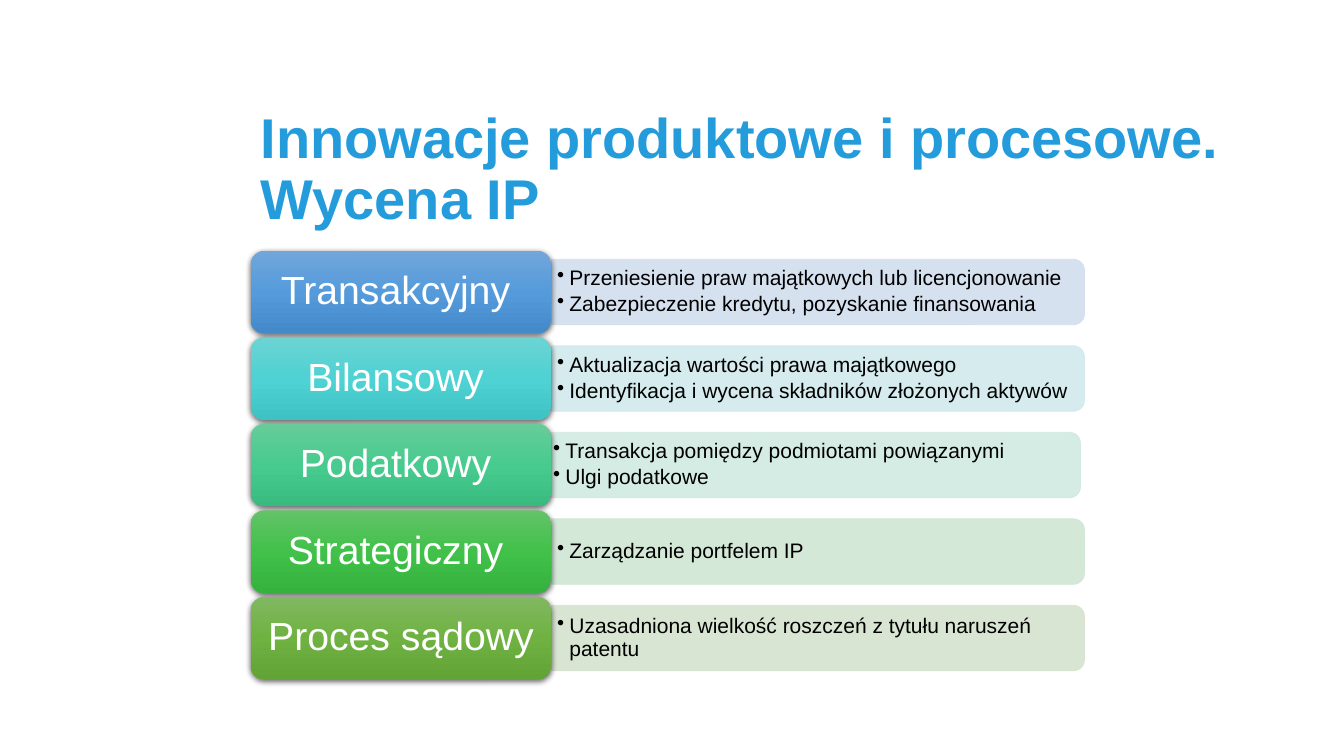
from pptx import Presentation
from pptx import util as u
from pptx.dml.color import RGBColor
from pptx.enum import shapes, text
from pptx.oxml import parse_xml
from pptx.oxml.ns import nsdecls, qn

TITLE = "Innowacje produktowe i procesowe.\vWycena IP"

# label, panel colour, label gradient, left shift of the panel (cm), details
ROWS = [
    ("Transakcyjny ", "D2DEEF", ("71A6DB", "559BDB", "448ACA"), 0,
     ["Przeniesienie praw majątkowych lub licencjonowanie",
      "Zabezpieczenie kredytu, pozyskanie finansowania"]),
    ("Bilansowy ", "D1E9ED", ("6CD3D3", "4ED2D3", "3EC2C3"), 0,
     ["Aktualizacja wartości prawa majątkowego",
      "Identyfikacja i wycena składników złożonych aktywów"]),
    ("Podatkowy ", "D0EAE1", ("67CC9A", "47CB8E", "39BB7F"), 0.1,
     ["Transakcja pomiędzy podmiotami powiązanymi", "Ulgi podatkowe"]),
    ("Strategiczny ", "D0E6D4", ("63C368", "42C14A", "34B23D"), 0,
     ["Zarządzanie portfelem IP"]),
    ("Proces sądowy", "D5E3CF", ("81B861", "6FB242", "62A336"), 0,
     ["Uzasadniona wielkość roszczeń z tytułu naruszeń patentu"]),
]

LEFT, TOP, PITCH = 6.32, 6.32, 2.18
LABEL_W, LABEL_H = 7.57, 2.08
PANEL_W, PANEL_H = 13.44, 1.65
DETAIL_W, DETAIL_H = 13.36, 1.5

TITLE_FONT = {"name": "Arial", "size": u.Pt(40), "bold": True}
LABEL_FONT = {"name": "Arial", "size": u.Pt(28)}
DETAIL_FONT = {"name": "Arial", "size": u.Pt(15)}


def paint(color_format, value):
    color_format.rgb = RGBColor.from_string(value)


def cm_box(left, top, width, height):
    return [u.Cm(value) for value in (left, top, width, height)]


def set_frame(frame, margin_x, margin_y):
    frame.word_wrap = True
    frame.vertical_anchor = text.MSO_ANCHOR.MIDDLE
    frame.margin_left = frame.margin_right = u.Cm(margin_x)
    frame.margin_top = frame.margin_bottom = u.Cm(margin_y)


def write(para, words, font, color, align):
    para.text = words
    para.alignment = align
    para.line_spacing = 0.9
    for span in para.runs:
        for name, value in font.items():
            setattr(span.font, name, value)
        paint(span.font.color, color)


def add_panel(page, left, middle, color):
    """Add a bar rounded on its right end: a turned top-rounded rectangle."""
    center = left + PANEL_W / 2
    panel = page.shapes.add_shape(
        shapes.MSO_SHAPE.ROUND_2_SAME_RECTANGLE,
        *cm_box(center - PANEL_H / 2, middle - PANEL_W / 2, PANEL_H, PANEL_W))
    panel.rotation = 90
    panel.shadow.inherit = False
    panel.fill.solid()
    paint(panel.fill.fore_color, color)
    paint(panel.line.color, color)
    panel.line.width = u.Pt(0.5)
    for tint in panel._element.spPr.iter(qn("a:srgbClr")):
        tint.append(parse_xml(f'<a:alpha {nsdecls("a")} val="90000"/>'))


def add_details(page, left, middle, details):
    box = page.shapes.add_textbox(
        *cm_box(left, middle - DETAIL_H / 2, DETAIL_W, DETAIL_H))
    frame = box.text_frame
    set_frame(frame, 0.15, 0.08)
    for index, words in enumerate(details):
        para = frame.add_paragraph() if index else frame.paragraphs[0]
        para.space_after = u.Pt(2.25)
        props = para._p.get_or_add_pPr()
        props.set("marL", str(u.Cm(0.31)))
        props.set("indent", str(-u.Cm(0.31)))
        props.append(parse_xml(f'<a:buChar {nsdecls("a")} char="•"/>'))
        write(para, words, DETAIL_FONT, "000000", text.PP_ALIGN.LEFT)


def add_label(page, top, words, gradient):
    label = page.shapes.add_shape(shapes.MSO_SHAPE.ROUNDED_RECTANGLE,
                                  *cm_box(LEFT, top, LABEL_W, LABEL_H))
    label.line.fill.background()
    label.fill.gradient()
    label.fill.gradient_angle = 270
    props = label._element.spPr
    stops = props.find(".//" + qn("a:gsLst"))
    for stop in list(stops):
        stops.remove(stop)
    for index, color in enumerate(gradient):
        stops.append(parse_xml(
            f'<a:gs {nsdecls("a")} pos="{index * 50000}">'
            f'<a:srgbClr val="{color}"/></a:gs>'))
    label.shadow.inherit = False
    props.find(qn("a:effectLst")).append(parse_xml(
        f'<a:outerShdw {nsdecls("a")} blurRad="{u.Pt(4.5)}" dist="{u.Pt(1.5)}"'
        ' dir="5400000" algn="ctr" rotWithShape="0">'
        '<a:srgbClr val="000000"><a:alpha val="63000"/></a:srgbClr>'
        '</a:outerShdw>'))
    set_frame(label.text_frame, 0.3, 0.15)
    write(label.text_frame.paragraphs[0], words, LABEL_FONT, "FFFFFF",
          text.PP_ALIGN.CENTER)


def main():
    deck = Presentation()
    deck.slide_width, deck.slide_height = u.Cm(33.87), u.Cm(19.05)
    page = deck.slides.add_slide(deck.slide_layouts[5])

    title = page.shapes.title
    title.left, title.top, title.width, title.height = cm_box(
        LEFT, 2.72, 26.01, 3.18)
    set_frame(title.text_frame, 0.25, 0.13)
    write(title.text_frame.paragraphs[0], TITLE, TITLE_FONT, "249CDC",
          text.PP_ALIGN.LEFT)

    for index, (words, color, gradient, shift, details) in enumerate(ROWS):
        top = TOP + index * PITCH
        middle = top + LABEL_H / 2
        panel_left = LEFT + LABEL_W - shift
        add_panel(page, panel_left, middle, color)
        add_details(page, panel_left, middle, details)
        add_label(page, top, words, gradient)

    deck.save("out.pptx")


if __name__ == "__main__":
    main()
